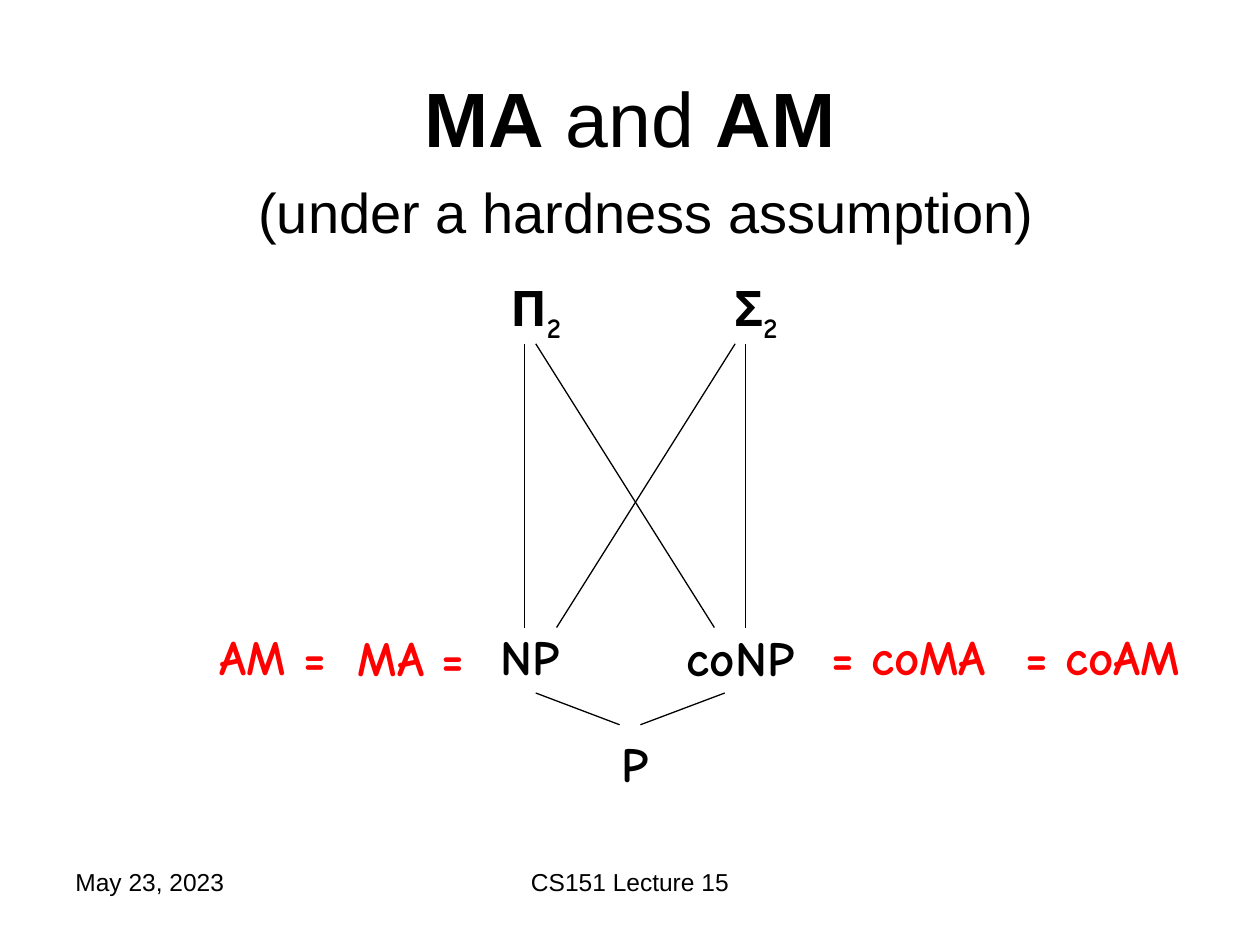
from dataclasses import dataclass

from lxml.etree import SubElement
from pptx import Presentation
from pptx.dml.color import RGBColor
from pptx.enum.shapes import MSO_CONNECTOR as Connector
from pptx.enum.text import MSO_ANCHOR as Anchor, MSO_AUTO_SIZE as AutoSize, PP_ALIGN as Align
from pptx.oxml.ns import qn
from pptx.util import Cm, Pt


@dataclass(frozen=True)
class Theme:
    text_font: str = "Arial"
    class_font: str = "Comic Neue"
    black: RGBColor = RGBColor(0, 0, 0)
    red: RGBColor = RGBColor(255, 0, 0)
    title_size: int = 44
    subtitle_size: int = 32
    class_size: int = 28
    footer_size: int = 14
    line_width: float = 0.75


class SlideBuilder:
    def __init__(self, slide, theme):
        self.slide = slide
        self.theme = theme

    def format_font(self, paragraph, name, size, color):
        paragraph.font.name = name
        paragraph.font.size = Pt(size)
        paragraph.font.color.rgb = color

    def title(self, runs, left, top, width, height):
        shape = self.slide.shapes.title
        shape.left, shape.top, shape.width, shape.height = map(Cm, (left, top, width, height))
        shape.text_frame.vertical_anchor = Anchor.MIDDLE
        paragraph = shape.text_frame.paragraphs[0]
        paragraph.alignment = Align.CENTER
        self.format_font(paragraph, self.theme.text_font, self.theme.title_size, self.theme.black)
        for text, bold in runs:
            run = paragraph.add_run()
            run.text = text
            run.font.bold = bold

    def text(self, text, left, top, width, height, size, align=Align.CENTER):
        shape = self.slide.shapes.add_textbox(*map(Cm, (left, top, width, height)))
        shape.text_frame.word_wrap = True
        paragraph = shape.text_frame.paragraphs[0]
        paragraph.text = text
        paragraph.alignment = align
        self.format_font(paragraph, self.theme.text_font, size, self.theme.black)
        return shape.text_frame

    def class_label(self, text, left, top, width, color, subscript=""):
        frame = self.text(text, left, top, width, 1.45, self.theme.class_size)
        frame.auto_size = AutoSize.SHAPE_TO_FIT_TEXT
        paragraph = frame.paragraphs[0]
        self.format_font(paragraph, self.theme.class_font, self.theme.class_size, color)
        paragraph.font.bold = True
        if subscript:
            run = paragraph.add_run()
            run.text = subscript
            run._r.get_or_add_rPr().set("baseline", "-25000")

    def line(self, x1, y1, x2, y2):
        line = self.slide.shapes.add_connector(Connector.STRAIGHT, *map(Cm, (x1, y1, x2, y2)))
        line.line.color.rgb = self.theme.black
        line.line.width = Pt(self.theme.line_width)
        SubElement(line._element.spPr, qn("a:effectLst"))


def main():
    presentation = Presentation()
    presentation.slide_width, presentation.slide_height = Cm(25.4), Cm(19.05)
    theme = Theme()
    builder = SlideBuilder(presentation.slides.add_slide(presentation.slide_layouts[5]), theme)

    # Heading
    builder.title([("MA", True), (" and ", False), ("AM", True)], 1.27, 0.76, 22.86, 3.18)
    subtitle = builder.text("(under a hardness assumption)", 4.24, 3.45, 17.58, 1.63,
                            theme.subtitle_size)
    subtitle.auto_size = AutoSize.SHAPE_TO_FIT_TEXT

    # Inclusion lines: each vertical is a chain of overlapping segments
    left_x, right_x = 10.58, 15.03
    upper_y, lower_y = 6.93, 12.65
    verticals = {
        left_x: [(upper_y, 10.8), (9.27, 11.85), (11.6, lower_y)],
        right_x: [(upper_y, 11.22), (9.27, 12.07), (11.6, lower_y)],
    }
    for x, segments in verticals.items():
        for start, end in segments:
            builder.line(x, start, x, end)
    builder.line(14.82, upper_y, 11.22, lower_y)
    builder.line(10.8, upper_y, 14.4, lower_y)
    for p_x, np_x in [(12.49, 10.8), (12.91, 14.61)]:
        builder.line(p_x, 14.61, np_x, 13.97)

    # Complexity classes
    for text, left, top, width, color, subscript in [
        ("Π", 9.53, 5.46, 2.54, theme.black, "2"),
        ("Σ", 13.97, 5.46, 2.54, theme.black, "2"),
        ("AM =", 3.6, 12.5, 3.81, theme.red, ""),
        ("MA = ", 6.56, 12.53, 3.81, theme.red, ""),
        ("NP", 9.74, 12.5, 1.9, theme.black, ""),
        ("coNP", 13.34, 12.53, 3.18, theme.black, ""),
        ("= coMA", 16.09, 12.5, 4.45, theme.red, ""),
        ("= coAM", 20.11, 12.5, 4.23, theme.red, ""),
        ("P", 11.85, 14.66, 1.9, theme.black, ""),
    ]:
        builder.class_label(text, left, top, width, color, subscript)

    # Footer
    builder.text("May 23, 2023", 1.27, 17.35, 5.93, 1.32, theme.footer_size, Align.LEFT)
    builder.text("CS151 Lecture 15", 8.68, 17.35, 8.04, 1.32, theme.footer_size)

    presentation.save("out.pptx")


if __name__ == "__main__":
    main()
